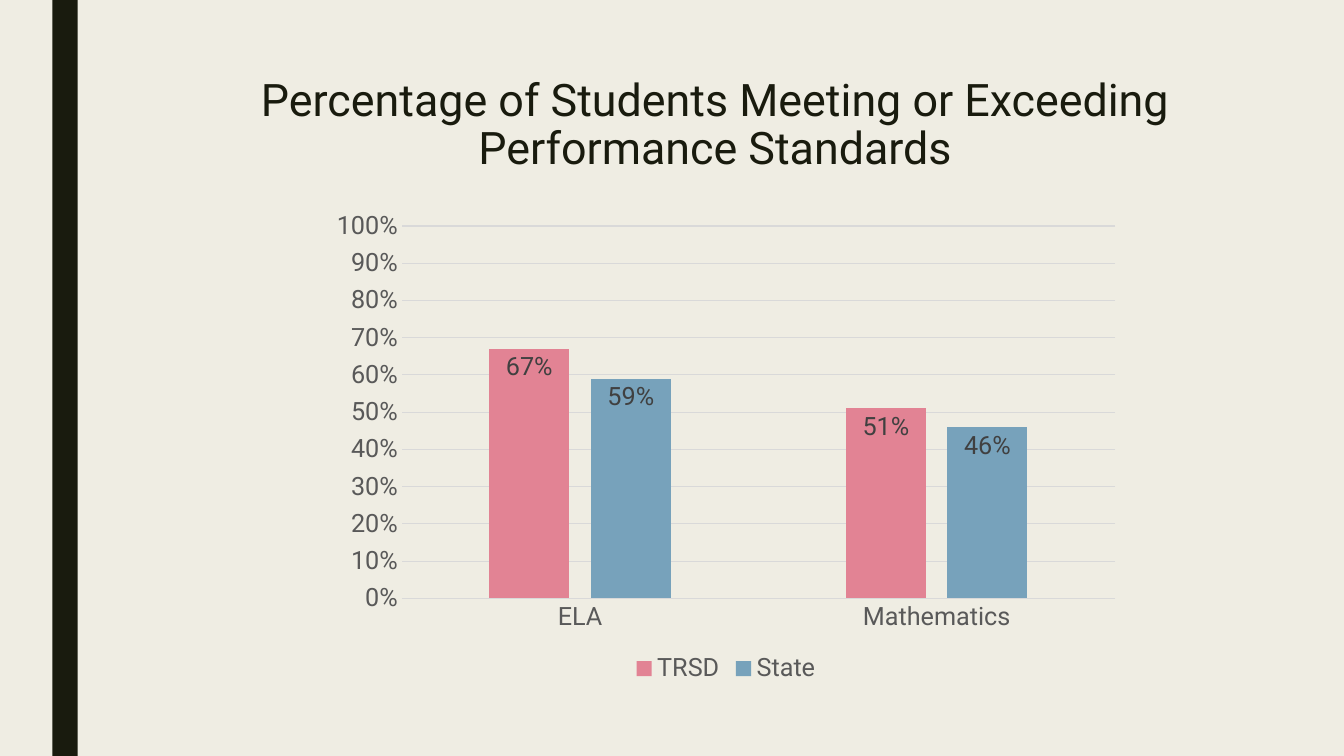
from pptx import Presentation
from pptx import util as u
from pptx.chart.data import CategoryChartData
from pptx.dml.color import RGBColor
from pptx.enum import chart as ch, shapes, text

BACKGROUND = RGBColor(0xEF, 0xED, 0xE3)
DARK = RGBColor(0x19, 0x1B, 0x0E)
AXIS_TEXT = RGBColor(0x59, 0x59, 0x59)
LABEL_TEXT = RGBColor(0x40, 0x40, 0x40)
GRID = RGBColor(0xD9, 0xD9, 0xD9)
PINK = RGBColor(0xE2, 0x83, 0x94)
BLUE = RGBColor(0x77, 0xA2, 0xBB)
FONT = "Roboto"


def style_font(font, size, color):
    font.name = FONT
    font.size = u.Pt(size)
    font.color.rgb = color


prs = Presentation()
prs.slide_width = u.Inches(13.33)
prs.slide_height = u.Inches(7.5)
s = prs.slides.add_slide(prs.slide_layouts[5])
s.background.fill.solid()
s.background.fill.fore_color.rgb = BACKGROUND

# Vertical bar at the left
bar = s.shapes.add_shape(shapes.MSO_SHAPE.RECTANGLE, u.Inches(0.52), 0,
                         u.Inches(0.25), u.Inches(7.5))
bar.shadow.inherit = False
bar.fill.solid()
bar.fill.fore_color.rgb = DARK
bar.line.fill.background()

# Title
title = s.shapes.title
title.left, title.top = u.Inches(1.5), u.Inches(0.75)
title.width, title.height = u.Inches(11.19), u.Inches(1)
tf = title.text_frame
tf.word_wrap = True
tf.auto_size = text.MSO_AUTO_SIZE.NONE
tf.vertical_anchor = text.MSO_ANCHOR.MIDDLE
p = tf.paragraphs[0]
p.alignment = text.PP_ALIGN.CENTER
p.line_spacing = 0.89
r = p.add_run()
r.text = "Percentage of Students Meeting or Exceeding Performance Standards"
style_font(r.font, 32, DARK)

# Column chart
data = CategoryChartData(number_format="0%")
data.categories = ["ELA", "Mathematics"]
data.add_series("TRSD", [0.67, 0.51])
data.add_series("State", [0.59, 0.46])
chart = s.shapes.add_chart(ch.XL_CHART_TYPE.COLUMN_CLUSTERED, u.Inches(3.18), u.Inches(2),
                           u.Inches(8.04), u.Inches(4.83), data).chart
style_font(chart.font, 18, AXIS_TEXT)
chart.has_title = False
chart.has_legend = True
chart.legend.position = ch.XL_LEGEND_POSITION.BOTTOM
chart.legend.include_in_layout = False
style_font(chart.legend.font, 18, AXIS_TEXT)

# Axes and gridlines
for axis in (chart.category_axis, chart.value_axis):
    axis.major_tick_mark = axis.minor_tick_mark = ch.XL_TICK_MARK.NONE
    style_font(axis.tick_labels.font, 18, AXIS_TEXT)
value_axis = chart.value_axis
value_axis.minimum_scale = 0
value_axis.maximum_scale = 1
value_axis.major_unit = 0.1
value_axis.tick_labels.number_format = "0%"
value_axis.tick_labels.number_format_is_linked = False
value_axis.format.line.fill.background()
for line in (chart.category_axis.format.line, value_axis.major_gridlines.format.line):
    line.color.rgb = GRID
    line.width = u.Pt(0.75)

# Columns and value labels
plot = chart.plots[0]
plot.vary_by_categories = False
plot.gap_width = 219
plot.overlap = -27
for series, color in zip(plot.series, (PINK, BLUE)):
    series.format.fill.solid()
    series.format.fill.fore_color.rgb = color
    labels = series.data_labels
    labels.show_value = True
    labels.position = ch.XL_LABEL_POSITION.INSIDE_END
    labels.number_format = "0%"
    labels.number_format_is_linked = False
    style_font(labels.font, 18, LABEL_TEXT)

prs.save("out.pptx")
